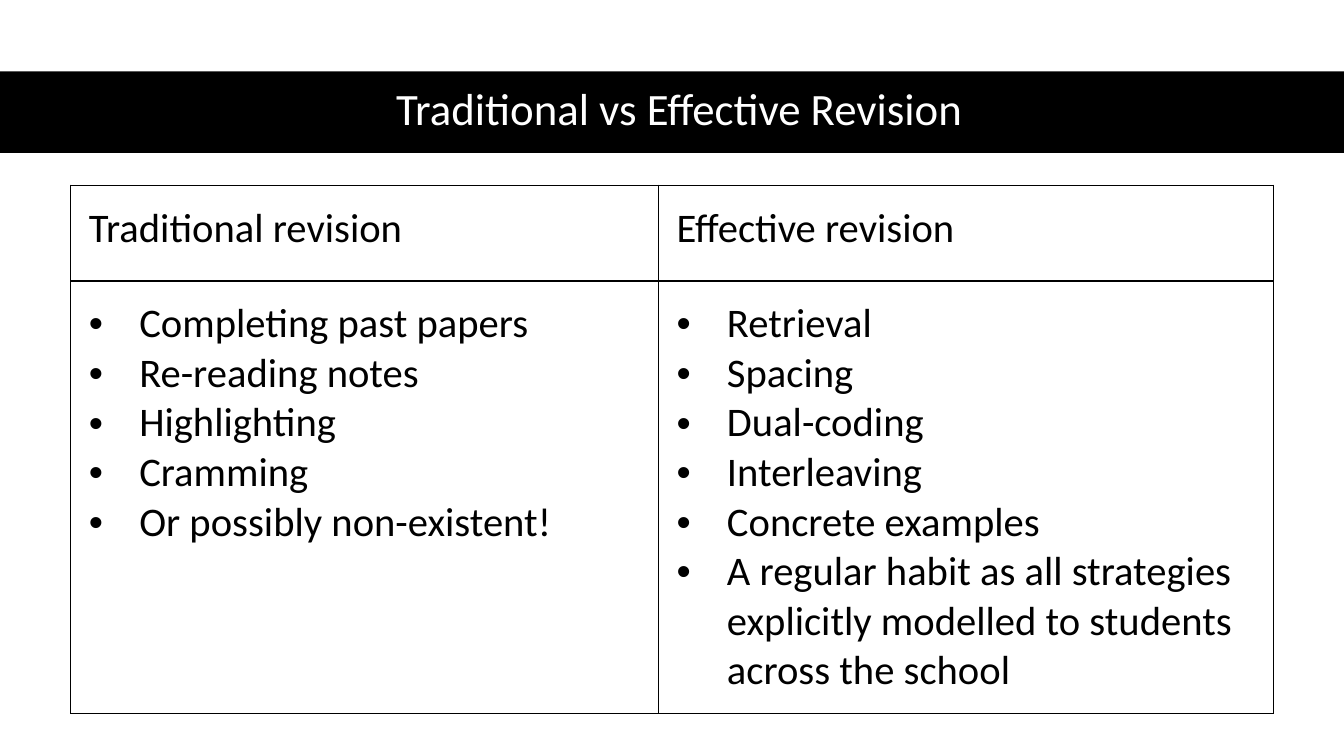
from dataclasses import dataclass

from lxml.etree import SubElement
from pptx import Presentation
from pptx.dml.color import RGBColor
from pptx.enum.shapes import MSO_SHAPE
from pptx.enum.text import MSO_ANCHOR, PP_ALIGN
from pptx.oxml.ns import qn
from pptx.util import Pt


@dataclass(frozen=True)
class Theme:
    font: str = "Calibri"
    ink: str = "000000"
    paper: str = "FFFFFF"
    title_size: float = 32
    body_size: float = 29
    border: float = 1
    inset: float = 13
    indent: float = 36


COLUMNS = {
    "Traditional revision": [
        "Completing past papers",
        "Re-reading notes",
        "Highlighting",
        "Cramming",
        "Or possibly non-existent!",
    ],
    "Effective revision": [
        "Retrieval",
        "Spacing",
        "Dual-coding",
        "Interleaving",
        "Concrete examples",
        "A regular habit as all strategies explicitly modelled to students across the school",
    ],
}


def set_format(obj, values):
    for name, value in values.items():
        setattr(obj, name, value)


class SlideBuilder:
    def __init__(self, slide, theme):
        self.slide = slide
        self.theme = theme

    def add_text(self, p, text, size, color):
        r = p.add_run()
        r.text = text
        set_format(r.font, {"name": self.theme.font, "size": Pt(size), "bold": False})
        r.font.color.rgb = RGBColor.from_string(color)

    def band(self, *box):
        sp = self.slide.shapes.add_shape(MSO_SHAPE.RECTANGLE, *map(Pt, box))
        sp.shadow.inherit = False
        sp.fill.solid()
        sp.fill.fore_color.rgb = RGBColor.from_string(self.theme.ink)
        sp.line.fill.background()

    def title(self, text, *box):
        tf = self.slide.shapes.add_textbox(*map(Pt, box)).text_frame
        set_format(tf, {"word_wrap": True, "vertical_anchor": MSO_ANCHOR.MIDDLE})
        p = tf.paragraphs[0]
        set_format(p, {"alignment": PP_ALIGN.CENTER, "line_spacing": 0.9})
        self.add_text(p, text, self.theme.title_size, self.theme.paper)

    def bullet(self, p):
        pPr = p._p.get_or_add_pPr()
        pPr.set("marL", str(Pt(self.theme.indent)))
        pPr.set("indent", str(-Pt(self.theme.indent)))
        SubElement(pPr, qn("a:buFont"), typeface="Arial")
        SubElement(pPr, qn("a:buChar"), char="•")

    def borders(self, cell):
        tcPr = cell._tc.get_or_add_tcPr()
        for side in ("lnL", "lnR", "lnT", "lnB"):
            ln = SubElement(tcPr, qn(f"a:{side}"), w=str(Pt(self.theme.border)))
            fill = SubElement(ln, qn("a:solidFill"))
            SubElement(fill, qn("a:srgbClr"), val=self.theme.ink)

    def cell(self, cell, lines, bulleted):
        inset = Pt(self.theme.inset)
        set_format(cell, {f"margin_{side}": inset for side in ("left", "right", "top", "bottom")})
        self.borders(cell)
        cell.fill.background()
        tf = cell.text_frame
        for i, line in enumerate(lines):
            p = tf.add_paragraph() if i else tf.paragraphs[0]
            if bulleted:
                self.bullet(p)
            self.add_text(p, line, self.theme.body_size, self.theme.ink)

    def table(self, columns, left, top, widths, heights):
        """Draw one column per entry: its heading above its bulleted list."""
        box = map(Pt, (left, top, sum(widths), sum(heights)))
        table = self.slide.shapes.add_table(len(heights), len(widths), *box).table
        set_format(table, {"first_row": False, "horz_banding": False})
        for row, height in zip(table.rows, heights):
            row.height = Pt(height)
        for c, (heading, items) in enumerate(columns.items()):
            table.columns[c].width = Pt(widths[c])
            self.cell(table.cell(0, c), [heading], bulleted=False)
            self.cell(table.cell(1, c), items, bulleted=True)


def main():
    prs = Presentation()
    set_format(prs, {"slide_width": Pt(960), "slide_height": Pt(540)})
    s = SlideBuilder(prs.slides.add_slide(prs.slide_layouts[6]), Theme())
    s.band(0, 51, 960, 58.3)
    s.title("Traditional vs Effective Revision", 43.9, 50.4, 882.7, 58.3)
    s.table(COLUMNS, 50.5, 132.3, widths=(419.8, 439.2), heights=(68.4, 309))
    prs.save("out.pptx")


if __name__ == "__main__":
    main()
